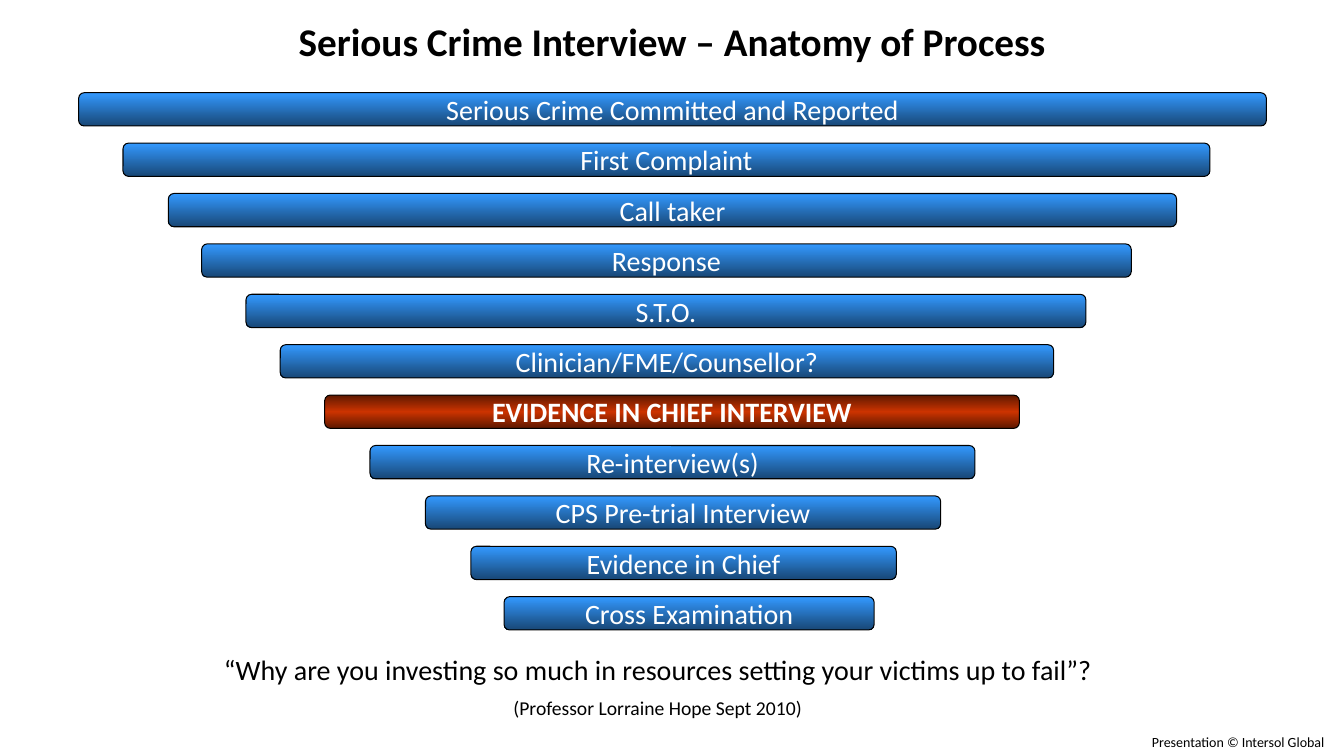
from lxml.etree import SubElement
from pptx import Presentation
from pptx.dml.color import RGBColor
from pptx.enum.shapes import MSO_SHAPE
from pptx.enum.text import MSO_ANCHOR, PP_ALIGN
from pptx.oxml.ns import qn
from pptx.util import Inches, Pt

FONT = "Calibri"
COLORS = {
    "black": "000000",
    "white": "FFFFFF",
    "light_blue": "3399FF",
    "dark_blue": "184776",
    "red": "CC3300",
    "dark_red": "5E1800",
}
BLUE_STOPS = [(0, "light_blue"), (100, "dark_blue")]
RED_STOPS = [(0, "dark_red"), (50, "red"), (100, "dark_red")]

KEY_STAGE = "EVIDENCE IN CHIEF INTERVIEW"
# Stage name, left edge and width in inches
STAGES = [
    ("Serious Crime Committed and Reported", 0.78, 11.78),
    ("First Complaint", 1.22, 10.78),
    ("Call taker", 1.67, 10),
    ("Response", 2, 9.22),
    ("S.T.O.", 2.44, 8.33),
    ("Clinician/FME/Counsellor?", 2.78, 7.67),
    (KEY_STAGE, 3.22, 6.89),
    ("Re-interview(s)", 3.67, 6),
    ("CPS Pre-trial Interview", 4.22, 5.11),
    ("Evidence in Chief", 4.67, 4.22),
    ("Cross Examination", 5, 3.67),
]
FIRST_BAR_TOP = 0.92
BAR_STEP = 0.5
BAR_HEIGHT = 0.33


def rgb(name):
    return RGBColor.from_string(COLORS[name])


def write(para, text, size, color="black", bold=False):
    """Add one centred run to a paragraph."""
    para.alignment = PP_ALIGN.CENTER
    span = para.add_run()
    span.text = text
    span.font.name = FONT
    span.font.size = Pt(size)
    span.font.bold = bold
    span.font.color.rgb = rgb(color)


def fill_gradient(shape, stops):
    """Fill a shape from top to bottom with (percent, colour name) stops."""
    shape.fill.gradient()
    shape.fill.gradient_angle = 270
    stop_list = shape._element.spPr.find(qn("a:gradFill")).find(qn("a:gsLst"))
    for old_stop in list(stop_list):
        stop_list.remove(old_stop)
    for percent, color in stops:
        stop = SubElement(stop_list, qn("a:gs"), pos=str(percent * 1000))
        SubElement(stop, qn("a:srgbClr"), val=COLORS[color])


def add_title(page, text):
    title = page.shapes.title
    title.left, title.top = Inches(1), Inches(0.17)
    title.width, title.height = Inches(11.33), Inches(0.58)
    title.text_frame.vertical_anchor = MSO_ANCHOR.TOP
    para = title.text_frame.paragraphs[0]
    para.line_spacing = 0.9
    write(para, text, 28, bold=True)


def add_bar(page, text, left, top, width):
    bar = page.shapes.add_shape(
        MSO_SHAPE.ROUNDED_RECTANGLE,
        Inches(left), Inches(top), Inches(width), Inches(BAR_HEIGHT),
    )
    is_key = text == KEY_STAGE
    bar.shadow.inherit = False
    fill_gradient(bar, RED_STOPS if is_key else BLUE_STOPS)
    bar.line.color.rgb = rgb("black")
    bar.line.width = Pt(0.75)
    frame = bar.text_frame
    frame.word_wrap = False
    frame.vertical_anchor = MSO_ANCHOR.MIDDLE
    write(frame.paragraphs[0], text, 20, "white", is_key)


def add_text(page, left, top, width, height, lines):
    """Add a text box holding one paragraph per (text, size) line."""
    box = page.shapes.add_textbox(
        Inches(left), Inches(top), Inches(width), Inches(height)
    )
    frame = box.text_frame
    frame.word_wrap = True
    for index, (text, size) in enumerate(lines):
        para = frame.add_paragraph() if index else frame.paragraphs[0]
        if index:
            para.space_before = Pt(size / 2)
        write(para, text, size)


def main():
    deck = Presentation()
    deck.slide_width, deck.slide_height = Inches(13.33), Inches(7.5)
    page = deck.slides.add_slide(deck.slide_layouts.get_by_name("Title Only"))
    add_title(page, "Serious Crime Interview – Anatomy of Process")
    for row, (text, left, width) in enumerate(STAGES):
        add_bar(page, text, left, FIRST_BAR_TOP + row * BAR_STEP, width)
    add_text(page, 1.71, 6.42, 9.63, 0.79, [
        ("“Why are you investing so much in resources setting your victims up to fail”?", 20),
        ("(Professor Lorraine Hope Sept 2010)", 14),
    ])
    add_text(page, 11.23, 7.23, 2.1, 0.27, [("Presentation © Intersol Global", 10)])
    deck.save("out.pptx")


if __name__ == "__main__":
    main()
